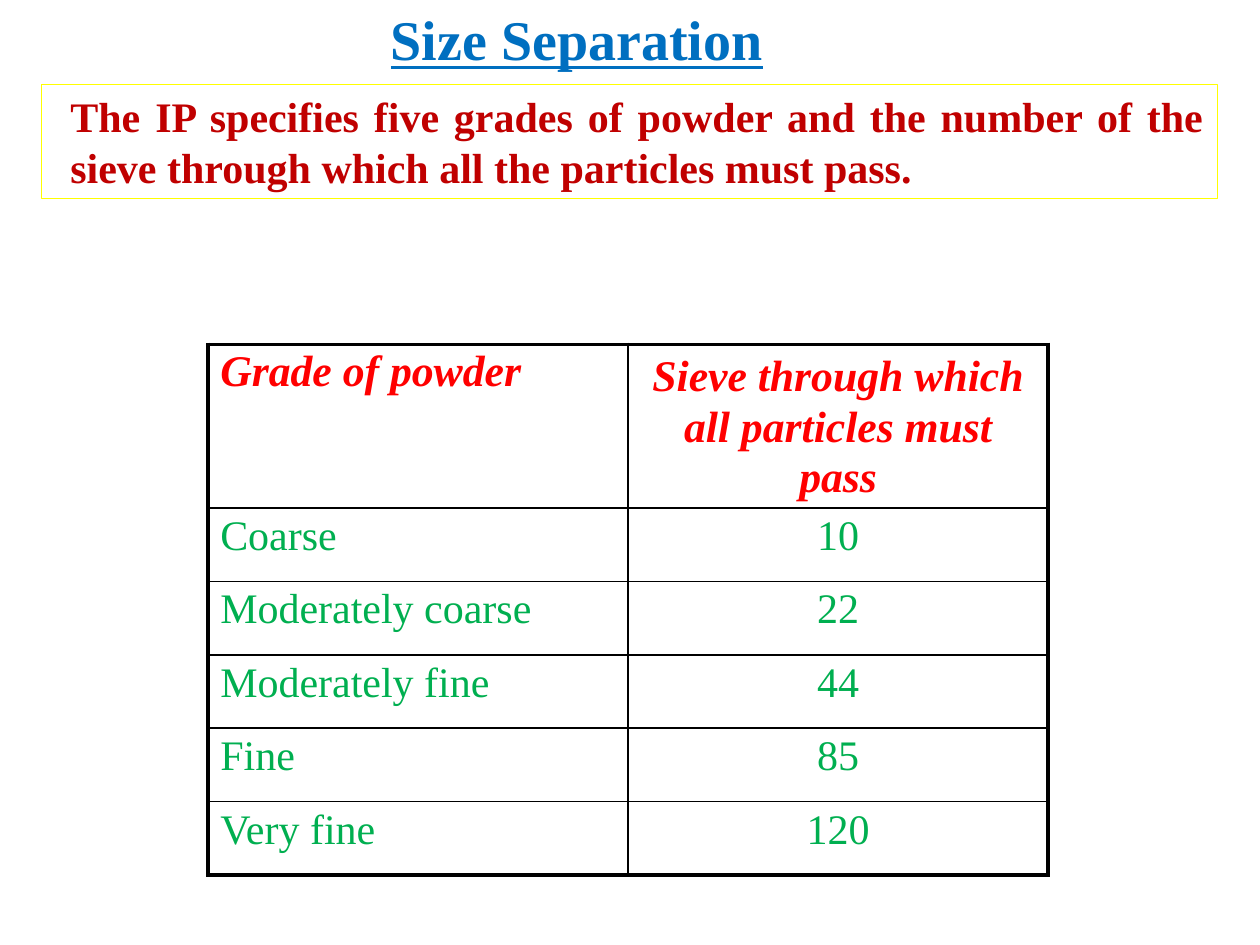
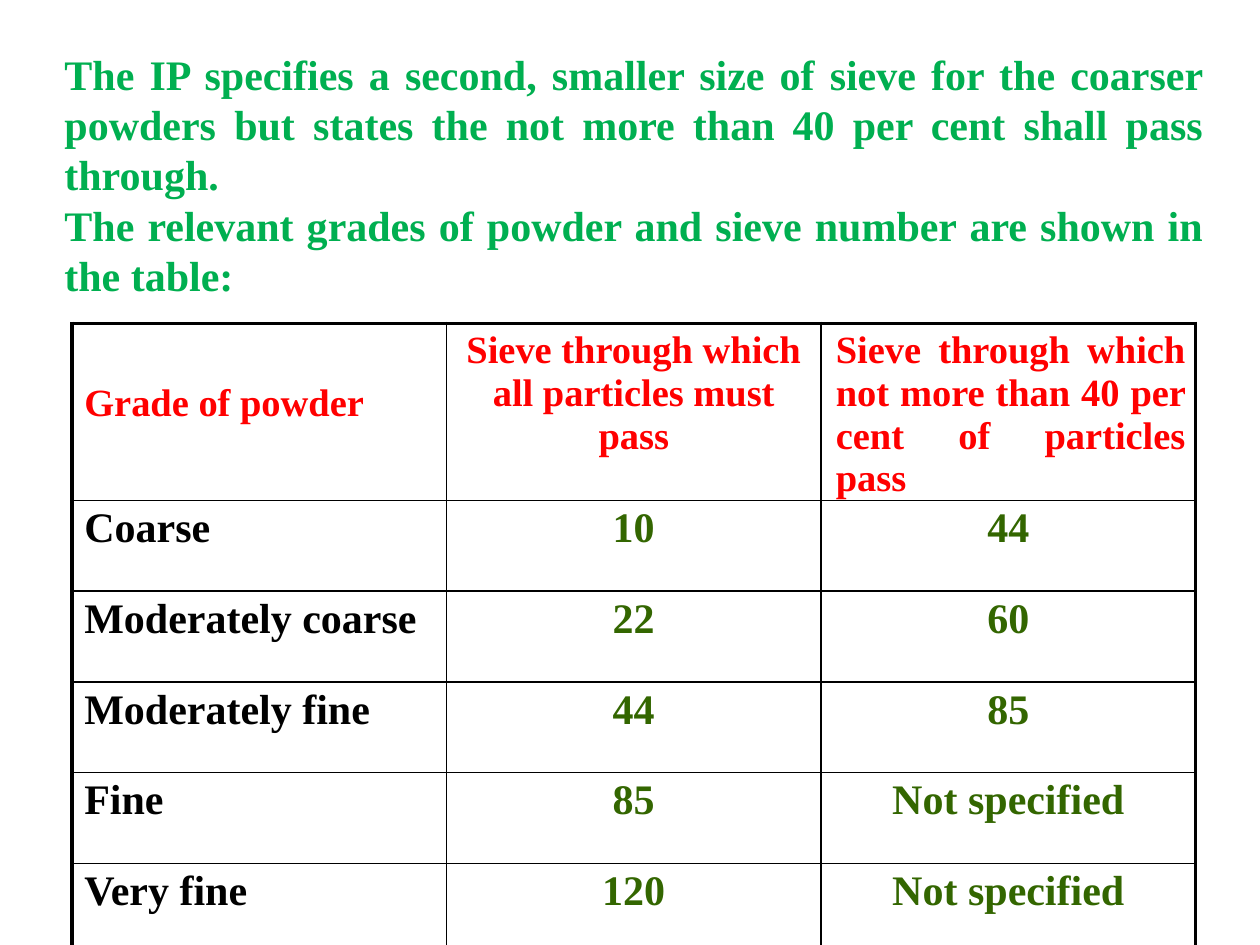
from dataclasses import dataclass

from lxml import etree
from pptx import Presentation
from pptx.dml.color import RGBColor
from pptx.enum.shapes import MSO_SHAPE
from pptx.enum.text import MSO_ANCHOR, PP_ALIGN
from pptx.oxml.ns import qn
from pptx.util import Cm, Pt


@dataclass(frozen=True)
class Theme:
    font: str = "Times New Roman"
    blue: str = "006FC0"
    dark_red: str = "C00000"
    red: str = "FF0000"
    green: str = "00AF50"
    dark_green: str = "336600"
    black: str = "000000"
    yellow: str = "FFFF00"
    title: float = 32
    body: float = 24
    head: float = 25
    small_head: float = 22
    body_line: float = 28.8
    head_line: float = 24.4
    outer: float = 2.25
    inner: float = 1


T = Theme()
LEFT, CENTER, JUSTIFY = PP_ALIGN.LEFT, PP_ALIGN.CENTER, PP_ALIGN.JUSTIFY


def put_text(frame, text, insets, size, color, align=LEFT, bold=True,
             italic=False, underline=False, line=None):
    """Fill a text frame; insets are left, top, right in cm."""
    frame.word_wrap = True
    frame.vertical_anchor = MSO_ANCHOR.TOP
    left, top, right = insets
    frame.margin_left, frame.margin_top = Cm(left), Cm(top)
    frame.margin_right, frame.margin_bottom = Cm(right), 0
    frame.text = text
    for p in frame.paragraphs:
        p.alignment = align
        if line:
            p.line_spacing = Pt(line)
        f = p.font
        f.name, f.size = T.font, Pt(size)
        f.bold, f.italic, f.underline = bold, italic, underline
        f.color.rgb = RGBColor.from_string(color)


def add_grid(s, left, top, col_width, row_heights, rows, styles):
    """Table with a thick frame; styles(row, column) gives put_text options."""
    n_rows, n_cols = len(rows), len(rows[0])
    tbl = s.shapes.add_table(n_rows, n_cols, Cm(left), Cm(top),
                             Cm(col_width * n_cols), Cm(sum(row_heights))).table
    tbl.first_row = tbl.horz_banding = False
    for col in tbl.columns:
        col.width = Cm(col_width)
    for i, row in enumerate(rows):
        tbl.rows[i].height = Cm(row_heights[i])
        for j, text in enumerate(row):
            cell = tbl.cell(i, j)
            options = dict(styles(i, j))
            left_in, top_in, right_in = options.pop("insets")
            put_text(cell.text_frame, text, (0, 0, 0), **options)
            cell.vertical_anchor = MSO_ANCHOR.TOP
            cell.margin_left, cell.margin_top = Cm(left_in), Cm(top_in)
            cell.margin_right, cell.margin_bottom = Cm(right_in), 0
            # Borders: thick on the outside, thin inside
            tc_pr = cell._tc.get_or_add_tcPr()
            for side, outside in (("L", j == 0), ("R", j == n_cols - 1),
                                  ("T", i == 0), ("B", i == n_rows - 1)):
                ln = etree.SubElement(tc_pr, qn(f"a:ln{side}"))
                ln.set("w", str(Pt(T.outer if outside else T.inner)))
                fill = etree.SubElement(ln, qn("a:solidFill"))
                etree.SubElement(fill, qn("a:srgbClr")).set("val", T.black)
            cell.fill.background()


prs = Presentation()
prs.slide_width, prs.slide_height = Cm(25.4), Cm(19.05)
blank = prs.slide_layouts[6]

# Shared data: grade, sieve passing all, sieve passing at most 40 per cent
GRADES = [
    ("Coarse", "10", "44"),
    ("Moderately coarse", "22", "60"),
    ("Moderately fine", "44", "85"),
    ("Fine", "85", "Not specified"),
    ("Very fine", "120", "Not specified"),
]
HEADERS = ("Grade of powder", "Sieve through which all particles must pass",
           "Sieve through which not more than 40 per cent of particles\vpass")
GRADE_INSETS, NUMBER_INSETS = (0.25, 0.1, 0), (0, 0.1, 0)

# Slide 1: title
s = prs.slides.add_slide(blank)
sp = s.shapes.add_textbox(Cm(7.85), 0, Cm(7.9), Cm(1.42))
put_text(sp.text_frame, "Size Separation", (0.03, 0.1, 0), T.title, T.blue,
         underline=True)

# Slide 1: table of grades
HEAD_1 = dict(size=T.head, color=T.red, italic=True)
BODY_1 = dict(size=T.body, color=T.green, bold=False)


def style_1(i, j):
    if i == 0 and j == 0:
        return dict(HEAD_1, insets=(0.25, 0.06, 0))
    if i == 0:
        return dict(HEAD_1, insets=(0.38, 0.13, 0.38), align=CENTER, line=T.body_line)
    if j == 0:
        return dict(BODY_1, insets=GRADE_INSETS)
    return dict(BODY_1, insets=NUMBER_INSETS, align=CENTER)


add_grid(s, 4.19, 6.94, 8.47, [3.3] + [1.48] * 5,
         [HEADERS[:2]] + [grade[:2] for grade in GRADES], style_1)

# Slide 1: framed statement
sp = s.shapes.add_shape(MSO_SHAPE.RECTANGLE, Cm(0.84), Cm(1.7), Cm(23.7), Cm(2.31))
sp.shadow.inherit = False
sp.fill.background()
sp.line.color.rgb = RGBColor.from_string(T.yellow)
sp.line.width = Pt(0.75)
put_text(sp.text_frame,
         "The IP specifies five grades of powder and the number of the "
         "sieve through which all the particles must pass.",
         (0.58, 0.13, 0.28), T.body, T.dark_red, JUSTIFY, line=T.body_line)

# Slide 2: table with both sieves
s = prs.slides.add_slide(blank)
HEAD_2 = dict(size=T.small_head, color=T.red)


def style_2(i, j):
    if i == 0:
        return dict(HEAD_2, **(
            dict(insets=(0.25, 1.18, 0)),
            dict(insets=(0.25, 0.12, 0.25), align=CENTER, line=T.head_line),
            dict(insets=(0.3, 0.12, 0.2), align=JUSTIFY, line=T.head_line),
        )[j])
    if j == 0:
        return dict(size=T.body, color=T.black, insets=GRADE_INSETS)
    return dict(size=T.body, color=T.dark_green, insets=NUMBER_INSETS, align=CENTER)


add_grid(s, 1.45, 6.52, 7.55, [3.53] + [1.83] * 5, [HEADERS] + GRADES, style_2)

# Slide 2: introduction
sp = s.shapes.add_textbox(Cm(1.27), Cm(0.91), Cm(23.27), Cm(5.16))
put_text(sp.text_frame,
         "The IP specifies a second, smaller size of sieve for the coarser powders "
         "but states the not more than 40 per cent shall pass through.\n"
         "The relevant grades of powder and sieve number are shown in the table:",
         (0.03, 0.06, 0.28), T.body, T.green, JUSTIFY, line=T.body_line)

prs.save("out.pptx")
